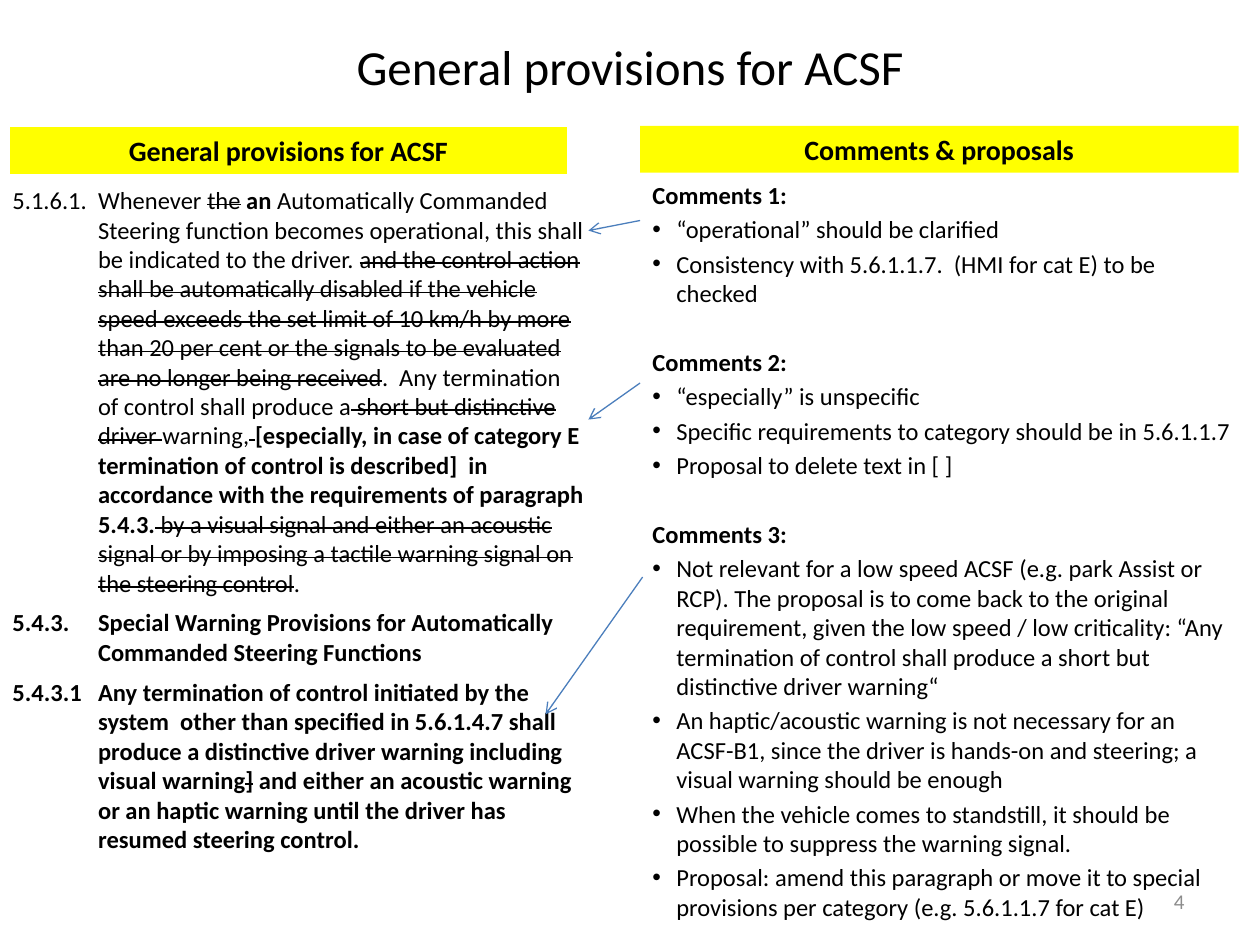
from lxml.etree import SubElement
from pptx import Presentation
from pptx.dml.color import RGBColor
from pptx.enum.shapes import MSO_CONNECTOR, MSO_SHAPE
from pptx.enum.text import MSO_ANCHOR, PP_ALIGN
from pptx.oxml.ns import qn
from pptx.util import Inches, Pt

hues = {"ink": "000000", "band": "FFFF00", "line": "4B7EBC", "page": "8C8C8C"}


def add_runs(para, runs, size, hue="ink", **extra):
    for text, mark in runs:
        run = para.add_run()
        run.text = text
        look = {"name": "Calibri", "size": Pt(size), "bold": "b" in mark}
        for key, val in look.items():
            setattr(run.font, key, val)
        run.font.color.rgb = RGBColor.from_string(hues[hue])
        if "s" in mark:
            run.font._element.set("strike", "sngStrike")
    for key, val in extra.items():
        setattr(para, key, val)


def add_box(left, top, width, height, anchor=MSO_ANCHOR.TOP):
    box = slide.shapes.add_textbox(*map(Inches, (left, top, width, height)))
    look = {"word_wrap": True, "vertical_anchor": anchor}
    for key, val in look.items():
        setattr(box.text_frame, key, val)
    return box.text_frame


deck = Presentation()
deck.slide_width, deck.slide_height = Inches(10), Inches(7.5)
slide = deck.slides.add_slide(deck.slide_layouts[6])

title = add_box(0.5, 0.17, 9, 0.7, MSO_ANCHOR.MIDDLE)
add_runs(title.paragraphs[0], [("General provisions for ACSF", "")], 28,
         alignment=PP_ALIGN.CENTER)

rules = [
    [
        ("5.1.6.1.\tWhenever ", ""),
        ("the", "s"),
        (" ", ""),
        ("an", "b"),
        (" Automatically Commanded Steering function becomes operational, "
         "this shall be indicated to the driver. ", ""),
        ("and the control action shall be automatically disabled if the "
         "vehicle speed exceeds the set limit of 10 km/h by more than "
         "20 per cent or the signals to be evaluated are no longer being "
         "received", "s"),
        (".  Any termination of control shall produce a", ""),
        (" short but distinctive driver ", "s"),
        ("warning,", ""),
        (" ", "s"),
        ("[especially, in case of category E termination of control is "
         "described]  in accordance with the requirements of paragraph "
         "5.4.3.", "b"),
        (" by a visual signal and either an acoustic signal or by imposing "
         "a tactile warning signal on the steering control", "s"),
        (".", ""),
    ],
    [("5.4.3.\tSpecial Warning Provisions for Automatically Commanded "
      "Steering Functions", "b")],
    [
        ("5.4.3.1\tAny termination of control initiated by the system  other "
         "than specified in 5.6.1.4.7 shall produce a distinctive driver "
         "warning including visual warning", "b"),
        ("]", "bs"),
        (" and either an acoustic warning or an haptic warning until the "
         "driver has resumed steering control.", "b"),
    ],
]
frame = add_box(0, 1.42, 4.75, 5.75)
for num, runs in enumerate(rules):
    para = frame.paragraphs[0] if num == 0 else frame.add_paragraph()
    props = para._p.get_or_add_pPr()
    props.set("marL", str(Inches(0.68)))
    props.set("indent", str(Inches(-0.68)))
    add_runs(para, runs, 14, space_before=Pt(6 if num else 0))

notes = {
    "Comments 1:": [
        "“operational” should be clarified",
        "Consistency with 5.6.1.1.7.  (HMI for cat E) to be checked",
    ],
    "Comments 2:": [
        "“especially” is unspecific",
        "Specific requirements to category should be in 5.6.1.1.7",
        "Proposal to delete text in [ ]",
    ],
    "Comments 3:": [
        "Not relevant for a low speed ACSF (e.g. park Assist or RCP). The "
        "proposal is to come back to the original requirement, given the low "
        "speed / low criticality: “Any termination of control shall produce "
        "a short but distinctive driver warning“",
        "An haptic/acoustic warning is not necessary for an ACSF-B1, since "
        "the driver is hands-on and steering; a visual warning should be "
        "enough",
        "When the vehicle comes to standstill, it should be possible to "
        "suppress the warning signal.",
        "Proposal: amend this paragraph or move it to special provisions per "
        "category (e.g. 5.6.1.1.7 for cat E)",
    ],
}
frame = add_box(5.08, 1.38, 4.83, 6.12)
for num, (head, items) in enumerate(notes.items()):
    para = frame.paragraphs[0] if num == 0 else frame.add_paragraph()
    add_runs(para, [(head, "b")], 14, space_before=Pt(22.6 if num else 0))
    for item in items:
        para = frame.add_paragraph()
        props = para._p.get_or_add_pPr()
        props.set("marL", str(Inches(0.19)))
        props.set("indent", str(Inches(-0.19)))
        SubElement(props, qn("a:buFont")).set("typeface", "Arial")
        SubElement(props, qn("a:buChar")).set("char", "•")
        add_runs(para, [(item, "")], 14, space_before=Pt(2.8))

page = add_box(7.17, 6.95, 2.33, 0.4, MSO_ANCHOR.MIDDLE)
add_runs(page.paragraphs[0], [("4", "")], 12, "page", alignment=PP_ALIGN.RIGHT)

bands = [
    ("General provisions for ACSF", 0.08, 1.01, 4.42),
    ("Comments & proposals", 5.08, 1, 4.75),
]
for text, left, top, width in bands:
    band = slide.shapes.add_shape(
        MSO_SHAPE.RECTANGLE, *map(Inches, (left, top, width, 0.37)))
    band.shadow.inherit = False
    band.fill.solid()
    band.fill.fore_color.rgb = RGBColor.from_string(hues["band"])
    band.line.fill.background()
    add_runs(band.text_frame.paragraphs[0], [(text, "b")], 16,
             alignment=PP_ALIGN.CENTER)

links = [
    (5.08, 1.75, 4.67, 1.83),
    (5.08, 3.04, 4.67, 3.33),
    (5.1, 4.58, 4.33, 5.67),
]
for ends in links:
    link = slide.shapes.add_connector(
        MSO_CONNECTOR.STRAIGHT, *map(Inches, ends))
    link.line.width = Pt(0.75)
    link.line.color.rgb = RGBColor.from_string(hues["line"])
    SubElement(link.line._ln, qn("a:tailEnd")).set("type", "arrow")
    SubElement(link._element.spPr, qn("a:effectLst"))

deck.save("out.pptx")
